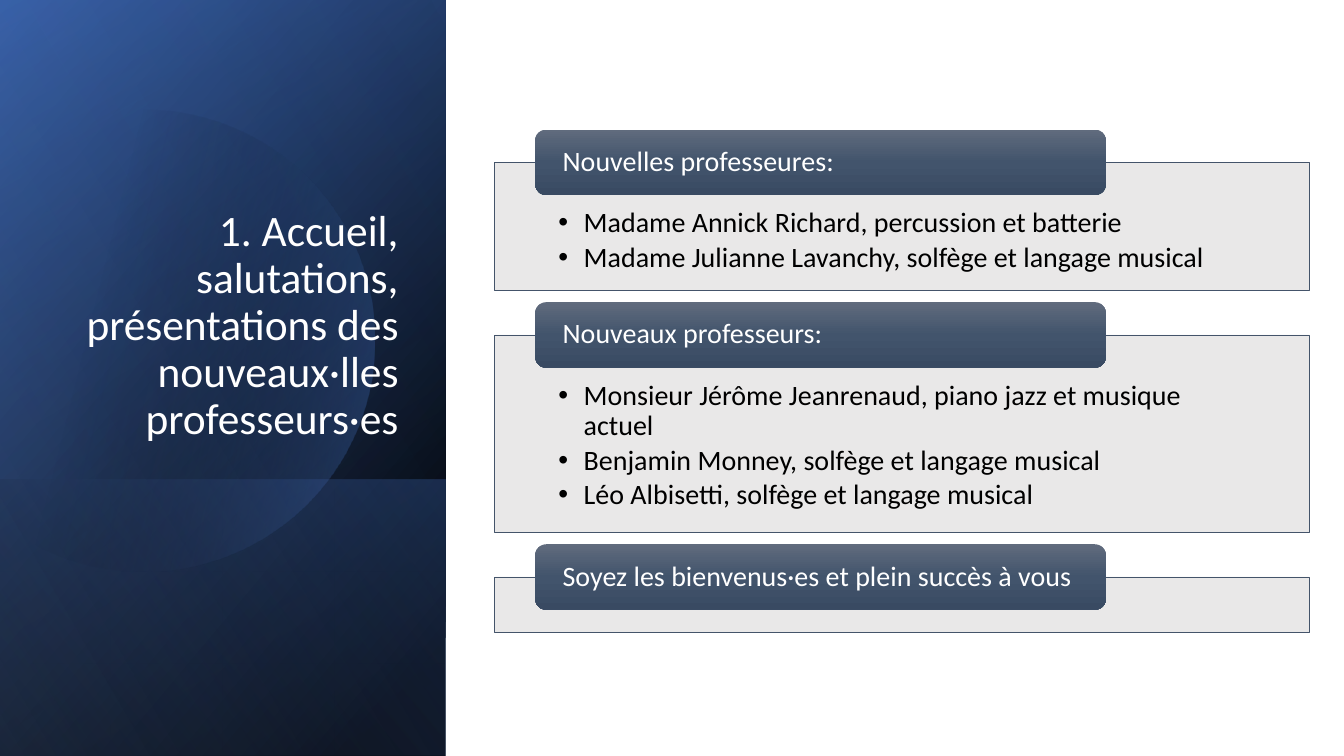
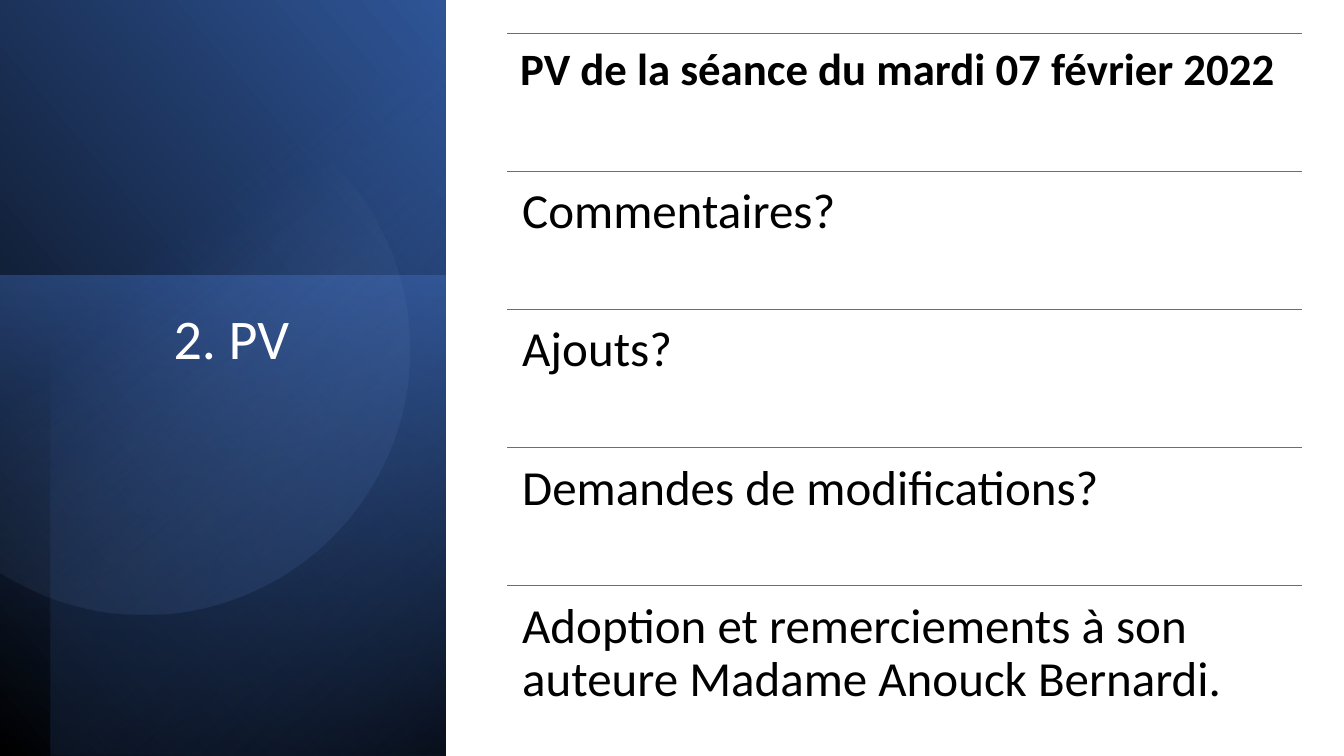
from dataclasses import dataclass
from math import acos, cos, pi, sin

from lxml.etree import SubElement
from pptx import Presentation
from pptx.dml.color import RGBColor
from pptx.enum.shapes import MSO_CONNECTOR, MSO_SHAPE
from pptx.enum.text import MSO_ANCHOR as Anchor, MSO_AUTO_SIZE, PP_ALIGN as Align
from pptx.oxml.ns import qn
from pptx.util import Cm, Pt


@dataclass(frozen=True)
class Theme:
    font: str = "Calibri"
    white: str = "FFFFFF"
    black: str = "000000"
    blue: str = "4472C4"
    deep_blue: str = "2F5597"
    navy: str = "203864"
    pale_blue: str = "8FAADC"
    slate: str = "44546A"
    header_top: str = "606B7D"
    header_middle: str = "42546C"
    header_bottom: str = "394A62"
    card: str = "E9E8E8"
    long_title_size: int = 31
    short_title_size: int = 40
    card_size: int = 20
    heading_row_size: int = 32
    row_size: int = 35
    line_spacing: float = 0.9


THEME = Theme()
SLIDE_WIDTH, SLIDE_HEIGHT, PANEL_WIDTH = 33.87, 19.05, 11.23


@dataclass(frozen=True)
class Stop:
    position: int
    color: str
    opacity: int = 100


@dataclass(frozen=True)
class Gradient:
    angle: float
    stops: tuple[Stop, ...]


@dataclass(frozen=True)
class Wash:
    """A rectangle of the side panel; its box is given as seen after the turn."""
    left: float
    top: float
    width: float
    height: float
    gradient: Gradient
    rotation: int = 90
    flipped: bool = True


@dataclass(frozen=True)
class Disc:
    """A circle of the side panel, cut by the left slide edge."""
    center_x: float
    center_y: float
    radius: float
    gradient: Gradient


@dataclass(frozen=True)
class Title:
    text: str
    left: float
    top: float
    width: float
    height: float
    size: int
    align: Align
    anchor: Anchor


@dataclass(frozen=True)
class Card:
    header: str
    height: float
    people: tuple[str, ...] = ()


@dataclass(frozen=True)
class Row:
    text: str
    size: int = THEME.row_size
    inset: float = 0.38
    bold: bool = False


def full_panel(*stops: Stop, angle: float) -> Wash:
    return Wash(0, 0, PANEL_WIDTH, SLIDE_HEIGHT, Gradient(angle, stops))


WELCOME_WASHES = (
    full_panel(Stop(8, THEME.black), Stop(100, THEME.deep_blue), angle=50),
    full_panel(Stop(0, THEME.black, 0), Stop(99, THEME.blue, 46), angle=30),
    Wash(0, 12.09, PANEL_WIDTH, 6.96,
         Gradient(130, (Stop(2, THEME.blue, 29), Stop(100, THEME.black, 30)))),
)
WELCOME_DISC = Disc(3.61, 8.59, 5.82, Gradient(
    13.9, (Stop(29, THEME.black, 0), Stop(100, THEME.blue, 43))))
WELCOME_GLAZE = full_panel(
    Stop(0, THEME.black, 0), Stop(99, THEME.pale_blue, 11), angle=120)
WELCOME_TITLE = Title(
    "1. Accueil, salutations, présentations des nouveaux·lles professeurs·es",
    1.63, 4.67, 8.66, 6.65, THEME.long_title_size, Align.RIGHT, Anchor.BOTTOM)
CARDS = (
    Card("Nouvelles professeures:", 3.23, (
        "Madame Annick Richard, percussion et batterie",
        "Madame Julianne Lavanchy, solfège et langage musical")),
    Card("Nouveaux professeurs:", 4.98, (
        "Monsieur Jérôme Jeanrenaud, piano jazz et musique actuel",
        "Benjamin Monney, solfège et langage musical",
        "Léo Albisetti, solfège et langage musical")),
    Card("Soyez les bienvenus·es et plein succès à vous", 1.4),
)
HEADER_GRADIENT = Gradient(90, (
    Stop(0, THEME.header_top), Stop(50, THEME.header_middle),
    Stop(100, THEME.header_bottom)))

MINUTES_WASHES = (
    full_panel(Stop(0, THEME.black), Stop(100, THEME.deep_blue), angle=310),
    Wash(0, 6.95, PANEL_WIDTH, 12.1,
         Gradient(190, (Stop(0, THEME.blue, 50), Stop(100, THEME.navy, 0))),
         rotation=270, flipped=False),
    Wash(1.27, 0, 9.96, SLIDE_HEIGHT,
         Gradient(220, (Stop(0, THEME.black, 59), Stop(69, THEME.blue, 0))),
         rotation=270),
)
MINUTES_DISC = Disc(3.63, 8.81, 6.68, Gradient(
    51.6, (Stop(39, THEME.pale_blue, 0), Stop(100, THEME.deep_blue, 26))))
MINUTES_TITLE = Title("2. PV", 1.83, 7.7, 8, 8.53,
                      THEME.short_title_size, Align.CENTER, Anchor.TOP)
ROWS = (
    Row("PV de la séance du mardi 07 février 2022",
        THEME.heading_row_size, 0.33, True),
    Row("Commentaires?"),
    Row("Ajouts?"),
    Row("Demandes de modifications?"),
    Row("Adoption et remerciements à son auteure Madame Anouck Bernardi."),
)


def rgb(color: str) -> RGBColor:
    return RGBColor.from_string(color)


def fill_gradient(shape, gradient: Gradient) -> None:
    shape.shadow.inherit = False
    shape.line.fill.background()
    shape.fill.gradient()
    shape.fill.gradient_angle = 360 - gradient.angle
    stop_list = shape._element.spPr.find(qn("a:gradFill")).find(qn("a:gsLst"))
    for default_stop in list(stop_list):
        stop_list.remove(default_stop)
    for stop in gradient.stops:
        entry = SubElement(stop_list, qn("a:gs"), pos=str(stop.position * 1000))
        color = SubElement(entry, qn("a:srgbClr"), val=stop.color)
        if stop.opacity < 100:
            SubElement(color, qn("a:alpha"), val=str(stop.opacity * 1000))


def draw_wash(slide, wash: Wash) -> None:
    length, depth = wash.height, wash.width
    panel = slide.shapes.add_shape(
        MSO_SHAPE.RECTANGLE,
        Cm(wash.left + (wash.width - length) / 2),
        Cm(wash.top + (wash.height - depth) / 2), Cm(length), Cm(depth))
    panel.rotation = wash.rotation
    if wash.flipped:
        panel._element.spPr.find(qn("a:xfrm")).set("flipH", "1")
    fill_gradient(panel, wash.gradient)


def draw_disc(slide, disc: Disc, steps: int = 120) -> None:
    reach = acos(-disc.center_x / disc.radius)
    angles = [-reach + 2 * reach * step / steps for step in range(steps + 1)]
    outline = [(Cm(disc.center_x + disc.radius * cos(angle)),
                Cm(disc.center_y + disc.radius * sin(angle)))
               for angle in angles]
    builder = slide.shapes.build_freeform(*outline[0])
    builder.add_line_segments(outline[1:], close=True)
    fill_gradient(builder.convert_to_shape(), disc.gradient)


def style_paragraph(paragraph, size: int, color: str, align=Align.LEFT,
                    bold: bool = False) -> None:
    paragraph.alignment = align
    paragraph.line_spacing = THEME.line_spacing
    paragraph.font.name = THEME.font
    paragraph.font.size = Pt(size)
    paragraph.font.bold = bold
    paragraph.font.color.rgb = rgb(color)


def set_frame(frame, anchor: Anchor, left: float, top: float,
              right: float, bottom: float) -> None:
    frame.word_wrap = True
    frame.auto_size = MSO_AUTO_SIZE.NONE
    frame.vertical_anchor = anchor
    frame.margin_left, frame.margin_top = Cm(left), Cm(top)
    frame.margin_right, frame.margin_bottom = Cm(right), Cm(bottom)


def add_bullet(paragraph, indent: float = 0.64) -> None:
    properties = paragraph._p.get_or_add_pPr()
    properties.set("marL", str(Cm(indent)))
    properties.set("indent", str(-Cm(indent)))
    SubElement(properties, qn("a:buFont"), typeface="Arial")
    SubElement(properties, qn("a:buChar"), char="•")


def draw_title(slide, title: Title) -> None:
    """Fill the title placeholder and bring it in front of the panel."""
    holder = slide.shapes.title
    slide.shapes._spTree.append(holder._element)
    holder.left, holder.top = Cm(title.left), Cm(title.top)
    holder.width, holder.height = Cm(title.width), Cm(title.height)
    holder.text_frame.text = title.text
    set_frame(holder.text_frame, title.anchor, 0.25, 0.13, 0.25, 0.13)
    style_paragraph(holder.text_frame.paragraphs[0], title.size, THEME.white,
                    title.align)


def draw_card(slide, card: Card, top: float) -> None:
    left, header_height = 12.47, 1.65
    body = slide.shapes.add_shape(MSO_SHAPE.RECTANGLE, Cm(left), Cm(top),
                                  Cm(20.52), Cm(card.height))
    body.shadow.inherit = False
    body.fill.solid()
    body.fill.fore_color.rgb = rgb(THEME.card)
    body.line.color.rgb = rgb(THEME.slate)
    body.line.width = Pt(0.5)
    if card.people:
        frame = body.text_frame
        set_frame(frame, Anchor.TOP, 1.6, 1.17, 1.6, 0.41)
        frame.text = "\n".join(card.people)
        for paragraph in frame.paragraphs:
            style_paragraph(paragraph, THEME.card_size, THEME.black)
            paragraph.space_after = Pt(3)
            add_bullet(paragraph)

    header = slide.shapes.add_shape(
        MSO_SHAPE.ROUNDED_RECTANGLE, Cm(left + 1.02), Cm(top - header_height / 2),
        Cm(14.38), Cm(header_height))
    fill_gradient(header, HEADER_GRADIENT)
    set_frame(header.text_frame, Anchor.MIDDLE, 0.61, 0, 0.61, 0)
    header.text_frame.text = card.header
    style_paragraph(header.text_frame.paragraphs[0], THEME.card_size, THEME.white)


def draw_row(slide, row: Row, top: float, height: float) -> None:
    left, width = 12.78, 20.02
    rule = slide.shapes.add_connector(MSO_CONNECTOR.STRAIGHT, Cm(left), Cm(top),
                                      Cm(left + width), Cm(top))
    rule.line.color.rgb = rgb(THEME.blue)
    rule.line.width = Pt(1)
    SubElement(rule._element.spPr, qn("a:effectLst"))
    frame = slide.shapes.add_textbox(Cm(left), Cm(top), Cm(width),
                                     Cm(height)).text_frame
    set_frame(frame, Anchor.TOP, *[row.inset] * 4)
    frame.text = row.text
    style_paragraph(frame.paragraphs[0], row.size, THEME.black, bold=row.bold)


def add_panel_slide(deck, washes: tuple[Wash, ...], disc: Disc, title: Title,
                    glazes: tuple[Wash, ...] = ()):
    slide = deck.slides.add_slide(deck.slide_layouts.get_by_name("Title Only"))
    for wash in washes:
        draw_wash(slide, wash)
    draw_disc(slide, disc)
    for glaze in glazes:
        draw_wash(slide, glaze)
    draw_title(slide, title)
    return slide


def main() -> None:
    deck = Presentation()
    deck.slide_width, deck.slide_height = Cm(SLIDE_WIDTH), Cm(SLIDE_HEIGHT)

    welcome = add_panel_slide(deck, WELCOME_WASHES, WELCOME_DISC, WELCOME_TITLE,
                              (WELCOME_GLAZE,))
    card_top, card_gap = 4.09, 1.12
    for card in CARDS:
        draw_card(welcome, card, card_top)
        card_top += card.height + card_gap

    minutes = add_panel_slide(deck, MINUTES_WASHES, MINUTES_DISC, MINUTES_TITLE)
    first_row_top, row_height = 0.84, 3.48
    for index, row in enumerate(ROWS):
        draw_row(minutes, row, first_row_top + index * row_height, row_height)

    deck.save("out.pptx")


if __name__ == "__main__":
    main()
